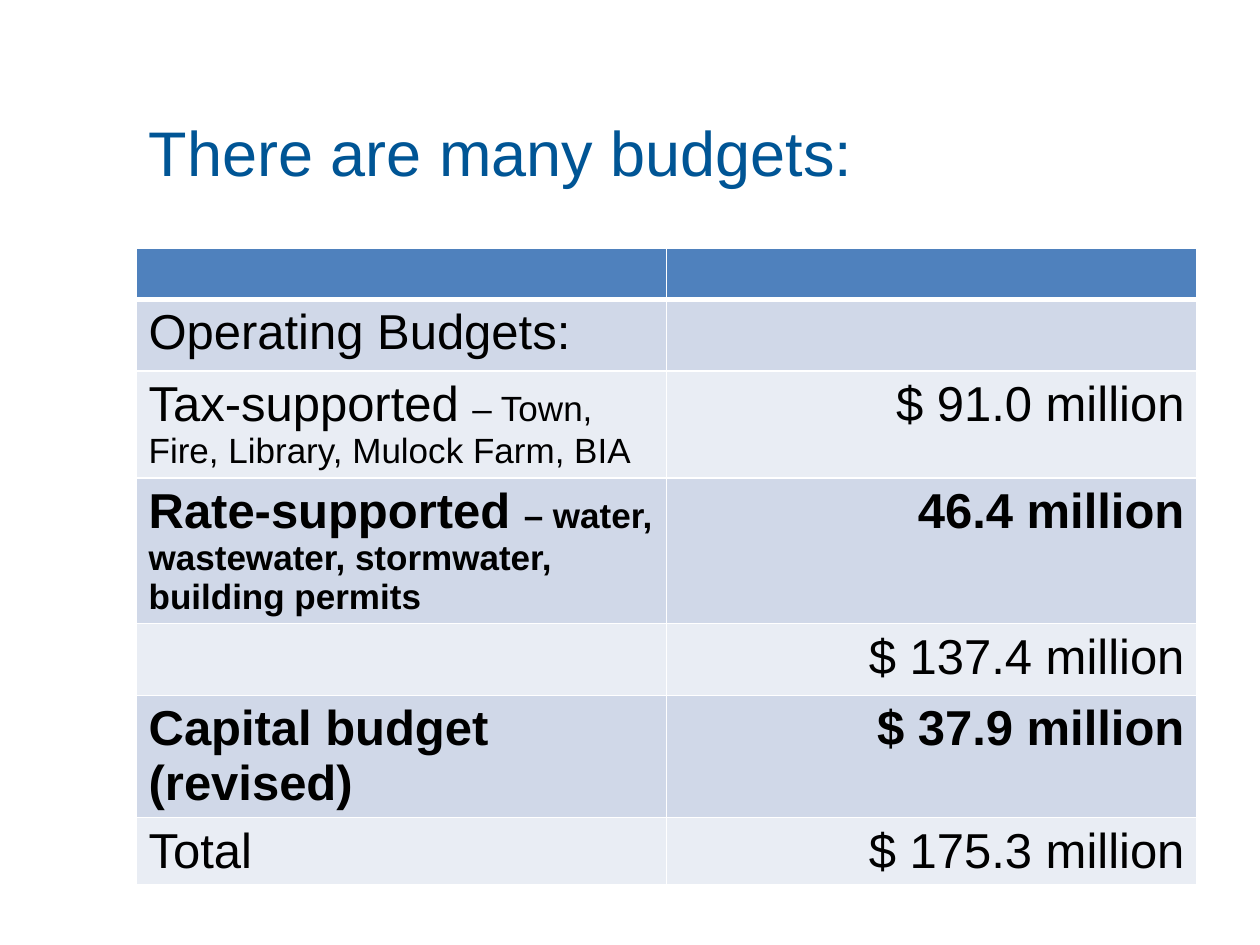
from lxml.etree import SubElement
from pptx import Presentation
from pptx.dml.color import RGBColor
from pptx.enum.text import MSO_ANCHOR as Anchor, PP_ALIGN as Align
from pptx.oxml.ns import qn
from pptx.util import Inches, Pt


def color(value):
    return RGBColor.from_string(value)


class BudgetSlide:
    """Holds the slide, its style and a method for each kind of element."""

    font = "Arial"
    blue, header, ink, white = "005595", "4F81BD", "000000", "FFFFFF"
    bands = ("D0D8E8", "E9EDF4")

    def __init__(self, deck):
        self.page = deck.slides.add_slide(deck.slide_layouts[5])

    def style(self, font, size, tint, bold=False):
        font.name, font.size, font.bold = self.font, Pt(size), bold
        font.color.rgb = color(tint)

    def title(self, text, left, top, width, height):
        box = self.page.shapes.title
        box.left, box.top = Inches(left), Inches(top)
        box.width, box.height = Inches(width), Inches(height)
        box.text_frame.vertical_anchor = Anchor.MIDDLE
        para = box.text_frame.paragraphs[0]
        para.text, para.alignment = text, Align.LEFT
        self.style(para.font, 36, self.blue)

    def borders(self, cell, bottom, top):
        properties = cell._tc.get_or_add_tcPr()
        for side, width in (("L", 1), ("R", 1), ("T", top), ("B", bottom)):
            line = SubElement(properties, qn(f"a:ln{side}"), w=str(Pt(width)))
            fill = SubElement(line, qn("a:solidFill"))
            SubElement(fill, qn("a:srgbClr"), val=self.white)

    def cell(self, cell, row, parts, bold, align):
        self.borders(cell, 3 if row == 0 else 1, 3 if row == 1 else 1)
        cell.fill.solid()
        tint = self.bands[(row - 1) % 2] if row else self.header
        cell.fill.fore_color.rgb = color(tint)
        para = cell.text_frame.paragraphs[0]
        para.alignment = align
        for text, size in parts:
            span = para.add_run()
            span.text = text
            self.style(span.font, size, self.ink, bold)

    def table(self, rows, left, top, width):
        height = sum(row[0] for row in rows)
        frame = self.page.shapes.add_table(
            len(rows), 2, Inches(left), Inches(top), Inches(width), Inches(height)
        )
        table = frame.table
        table.first_row = table.horz_banding = False
        for index, (row_height, label, detail, amount, bold) in enumerate(rows):
            table.rows[index].height = Inches(row_height)
            labels = [part for part in ((label, 28), (detail, 20)) if part[0]]
            amounts = [(amount, 28)] if amount else []
            self.cell(table.cell(index, 0), index, labels, bold, Align.LEFT)
            self.cell(table.cell(index, 1), index, amounts, bold, Align.RIGHT)


def main():
    deck = Presentation()
    deck.slide_width, deck.slide_height = Inches(10), Inches(7.5)
    slide = BudgetSlide(deck)
    slide.title("There are many budgets:", 1.08, 0.58, 9, 1.25)
    rows = [
        (0.4, "", "", "", False),
        (0.57, "Operating Budgets:", "", "", False),
        (0.85, "Tax-supported ", "– Town, Fire, Library, Mulock Farm, BIA",
         "$ 91.0 million", False),
        (1.15, "Rate-supported ", "– water, wastewater, stormwater, building permits",
         "46.4 million", True),
        (0.57, "", "", "$ 137.4 million", False),
        (0.97, "Capital budget (revised)", "", "$ 37.9 million", True),
        (0.53, "Total", "", "$ 175.3 million", False),
    ]
    slide.table(rows, 1.08, 1.97, 8.42)
    deck.save("out.pptx")


if __name__ == "__main__":
    main()
